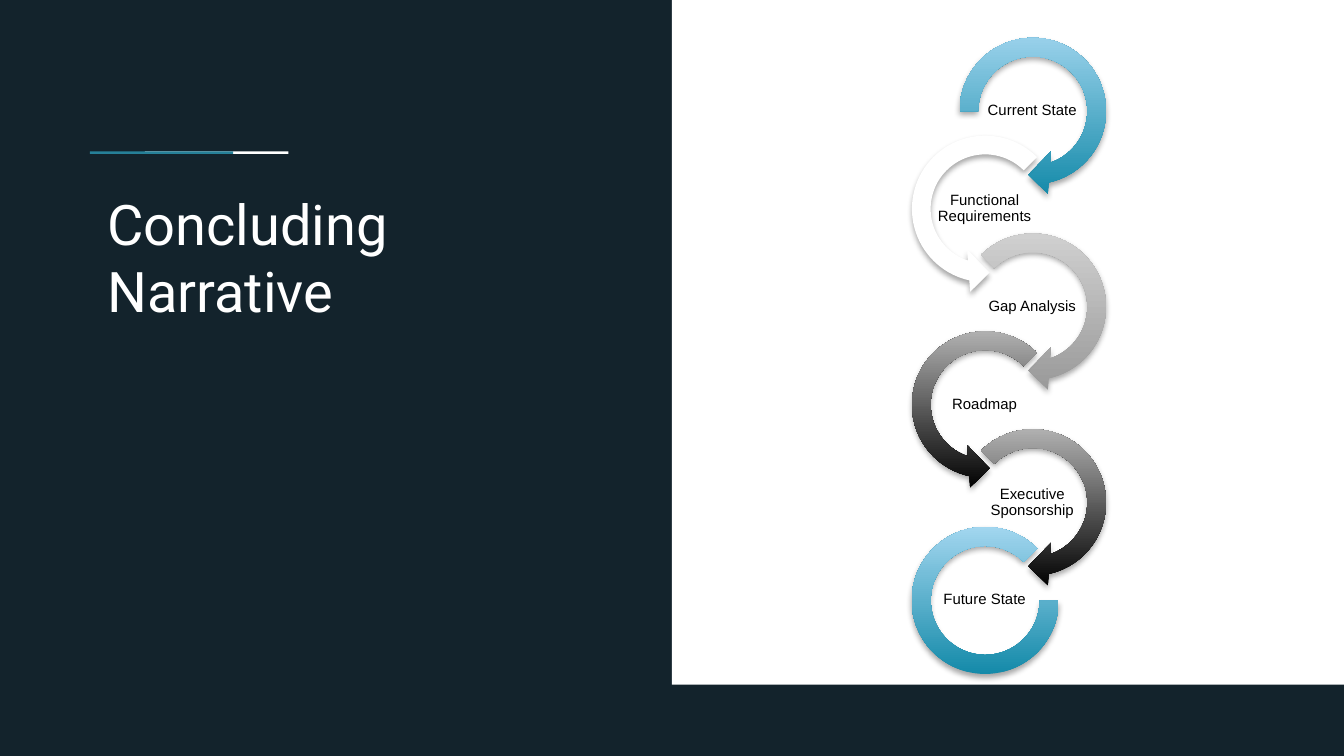
import lxml.etree
import pptx
import pptx.dml.color
import pptx.enum.shapes
import pptx.enum.text
import pptx.oxml.ns
import pptx.util

Cm, Pt = pptx.util.Cm, pptx.util.Pt
RGBColor = pptx.dml.color.RGBColor
MSO_SHAPE = pptx.enum.shapes.MSO_SHAPE
qn = pptx.oxml.ns.qn

NAVY = RGBColor(0x13, 0x23, 0x2C)
TEAL = RGBColor(0x26, 0x80, 0x98)
WHITE = RGBColor(0xFF, 0xFF, 0xFF)
BLACK = RGBColor(0x00, 0x00, 0x00)
OCEAN = RGBColor(0x14, 0x8A, 0xA9)
SKY = RGBColor(0xA2, 0xD6, 0xEF)
GREY = RGBColor(0x99, 0x99, 0x99)
PALE_GREY = RGBColor(0xD4, 0xD4, 0xD4)
SILVER = RGBColor(0xBD, 0xBD, 0xBD)

SLIDE_W, SLIDE_H = Cm(25.4), Cm(14.29)
BAND_H = Cm(1.35)

# Label, (bottom colour, top colour), start angle of the ring
STAGES = [
    ("Current State", (OCEAN, SKY), 108),
    ("Functional Requirements", (WHITE, WHITE), 189),
    ("Gap Analysis", (GREY, PALE_GREY), 135),
    ("Roadmap", (BLACK, SILVER), 189),
    ("Executive Sponsorship", (BLACK, SILVER), 135),
    ("Future State", (OCEAN, SKY), 189),
]


def add_plain_shape(s, kind, left, top, width, height, color):
    sp = s.shapes.add_shape(kind, left, top, width, height)
    sp.shadow.inherit = False
    sp.fill.solid()
    sp.fill.fore_color.rgb = color
    sp.line.fill.background()
    return sp


def add_text(s, text, left, top, width, height, margin, font, size, color):
    tb = s.shapes.add_textbox(left, top, width, height)
    tf = tb.text_frame
    tf.word_wrap = True
    tf.margin_left = tf.margin_right = tf.margin_top = tf.margin_bottom = margin
    tf.text = text
    f = tf.paragraphs[0].runs[0].font
    f.name, f.size, f.color.rgb = font, Pt(size), color
    return tf


def add_soft_shadow(sp):
    effects = sp._element.spPr.find(qn("a:effectLst"))
    shadow = lxml.etree.SubElement(
        effects, qn("a:outerShdw"), blurRad="40000", dist="23000",
        dir="5400000", rotWithShape="0")
    color = lxml.etree.SubElement(shadow, qn("a:srgbClr"), val="000000")
    lxml.etree.SubElement(color, qn("a:alpha"), val="35000")


def add_ring(s, kind, left, top, size, colors, adjustments):
    sp = add_plain_shape(s, kind, left, top, size, size, colors[0])
    if colors[0] != colors[1]:
        sp.fill.gradient()
        sp.fill.gradient_angle = 90
        for stop, color in zip(sp.fill.gradient_stops, colors):
            stop.color.rgb = color
    for i, value in enumerate(adjustments):
        sp.adjustments[i] = value
    add_soft_shadow(sp)


def add_label(s, text, left, top):
    tf = add_text(s, text, left, top, Cm(1.8), Cm(0.89), 0, "Arial", 8, BLACK)
    tf.vertical_anchor = pptx.enum.text.MSO_ANCHOR.MIDDLE
    p = tf.paragraphs[0]
    p.alignment = pptx.enum.text.PP_ALIGN.CENTER
    p.line_spacing = 0.9
    p.space_after = Pt(2.8)


def add_background(s):
    s.background.fill.solid()
    s.background.fill.fore_color.rgb = NAVY
    half = SLIDE_W // 2
    add_plain_shape(s, MSO_SHAPE.RECTANGLE, half, 0, half, SLIDE_H, WHITE)
    add_plain_shape(s, MSO_SHAPE.RECTANGLE, 0, SLIDE_H - BAND_H, SLIDE_W, BAND_H, NAVY)


def add_title(s, left, top, width, height):
    """Two-colour accent rule with the title below it."""
    for offset, color in ((Cm(1.04), WHITE), (0, TEAL)):
        add_plain_shape(s, MSO_SHAPE.RECTANGLE, left - Cm(0.08) + offset, top,
                        Cm(2.71), Cm(0.05), color)
    add_text(s, "Concluding Narrative", left, top + Cm(0.47), width, height,
             Cm(0.25), "Roboto", 30, WHITE)


def add_stage_chain(s, left, top, width, height):
    """Rings that alternate right and left down the box, closed by an arc."""
    ring = Cm(3.22)
    inset = Cm(0.22)
    step = (height - ring) // (len(STAGES) - 1)
    for i, (label, colors, start) in enumerate(STAGES):
        on_right = i % 2 == 0
        x = left + (width - ring if on_right else 0)
        y = top + i * step
        if i == len(STAGES) - 1:
            add_ring(s, MSO_SHAPE.BLOCK_ARC, x + inset, y + inset,
                     ring - 2 * inset, colors, (0, start, 0.13))
        else:
            kind = MSO_SHAPE.CIRCULAR_ARROW if on_right else MSO_SHAPE.LEFT_CIRCULAR_ARROW
            end = 45 if on_right else 63
            add_ring(s, kind, x, y, ring, colors, (0.11, 11.42, end, start, 0.125))
        add_label(s, label, x + Cm(0.7), y + Cm(1.16))


def main():
    prs = pptx.Presentation()
    prs.slide_width, prs.slide_height = SLIDE_W, SLIDE_H
    s = prs.slides.add_slide(prs.slide_layouts[6])
    add_background(s)
    add_title(s, Cm(1.78), Cm(2.86), Cm(9.17), Cm(4.7))
    add_stage_chain(s, Cm(17.01), Cm(0.49), Cm(4.12), Cm(12.47))
    prs.save("out.pptx")


if __name__ == "__main__":
    main()
